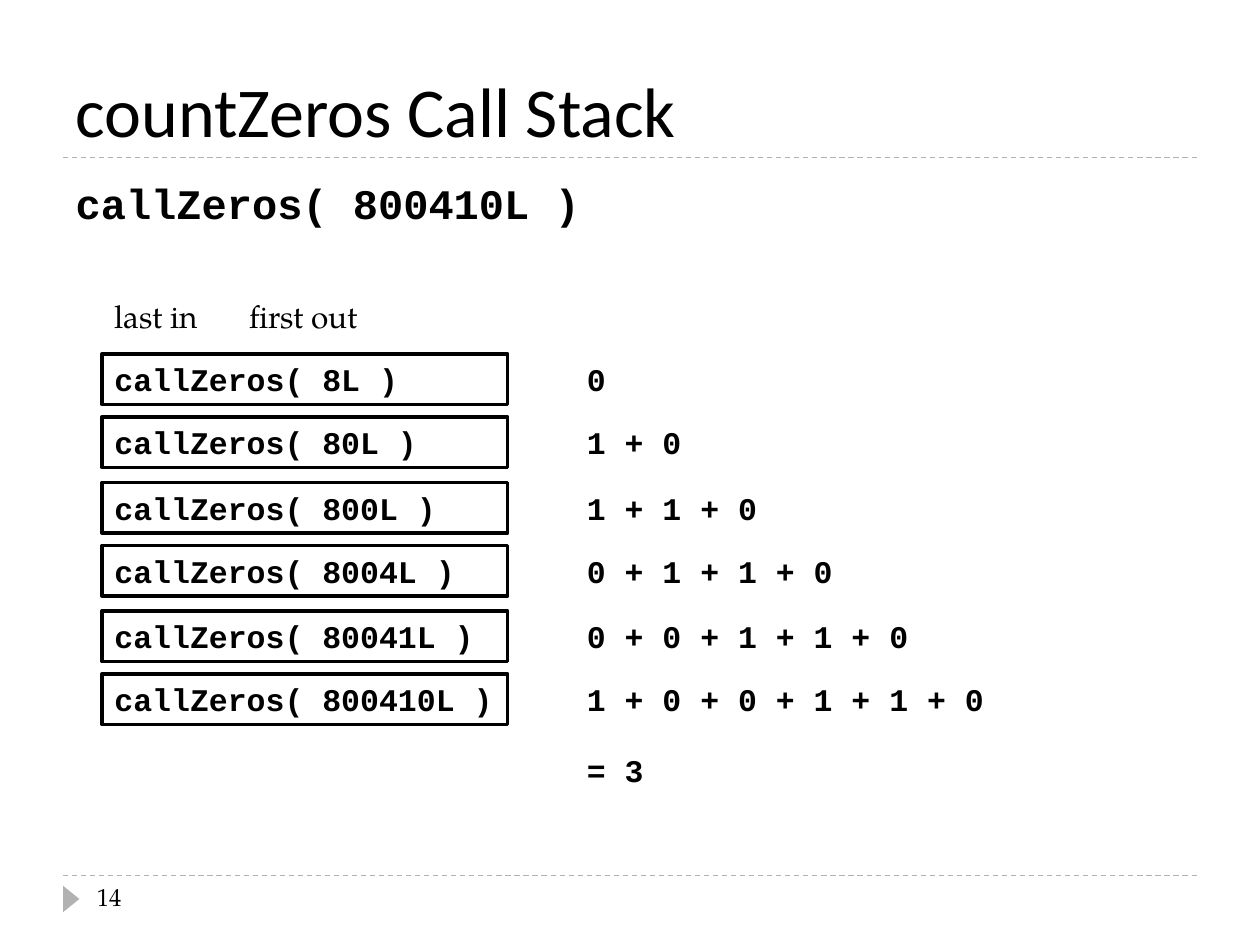
from lxml import etree
from pptx import Presentation
from pptx.dml.color import RGBColor
from pptx.enum.dml import MSO_LINE
from pptx.enum.shapes import MSO_CONNECTOR, MSO_SHAPE
from pptx.enum.text import MSO_ANCHOR, MSO_AUTO_SIZE, PP_ALIGN
from pptx.oxml.ns import qn
from pptx.util import Inches, Pt

COLORS = {name: RGBColor.from_string(value) for name, value in
          {"ink": "000000", "rule": "B2B2B2"}.items()}
HEADING, CODE, PROSE = "Calibri", "Courier New", "TeX Gyre Pagella"


def format_run(run, font, size, bold=False):
    run.font.name = font
    run.font.size = Pt(size)
    run.font.bold = bold
    run.font.color.rgb = COLORS["ink"]


def add_text(text, left, top, width, font, size, bold=False, framed=False):
    """Add one left-aligned line of text, with a black frame if framed."""
    place = [Inches(v) for v in (left, top, width, 0.4)]
    if framed:
        box = slide.shapes.add_shape(MSO_SHAPE.RECTANGLE, *place)
        box.shadow.inherit = False
        box.fill.background()
        box.line.color.rgb = COLORS["ink"]
        box.line.width = Pt(2)
    else:
        box = slide.shapes.add_textbox(*place)
    frame = box.text_frame
    frame.word_wrap = True
    frame.margin_right = 0
    frame.vertical_anchor = MSO_ANCHOR.TOP
    frame.text = text
    frame.paragraphs[0].alignment = PP_ALIGN.LEFT
    format_run(frame.paragraphs[0].runs[0], font, size, bold)


prs = Presentation()
prs.slide_width, prs.slide_height = Inches(10), Inches(7.5)
slide = prs.slides.add_slide(prs.slide_layouts[1])

# Rules and page marker
for y in (6.95, 1.25):
    rule = slide.shapes.add_connector(
        MSO_CONNECTOR.STRAIGHT, Inches(0.5), Inches(y), Inches(9.5), Inches(y))
    rule.line.color.rgb = COLORS["rule"]
    rule.line.width = Pt(0.75)
    rule.line.dash_style = MSO_LINE.DASH
    etree.SubElement(rule._element.spPr, qn("a:effectLst"))

marker = slide.shapes.add_shape(
    MSO_SHAPE.ISOSCELES_TRIANGLE, Inches(0.46), Inches(7.07), Inches(0.21), Inches(0.13))
marker.rotation = 90
marker.shadow.inherit = False
marker.fill.solid()
marker.fill.fore_color.rgb = COLORS["rule"]
marker.line.fill.background()
add_text("14", 0.67, 6.95, 2.17, PROSE, 14)

# Title and the first call
title, body = slide.shapes.title, slide.placeholders[1]
for holder, top, height, anchor in ((title, 0.17, 1.08, MSO_ANCHOR.BOTTOM),
                                    (body, 1.33, 5.4, MSO_ANCHOR.TOP)):
    holder.left, holder.top = Inches(0.5), Inches(top)
    holder.width, holder.height = Inches(9), Inches(height)
    holder.text_frame.auto_size = MSO_AUTO_SIZE.NONE
    holder.text_frame.vertical_anchor = anchor

title.text_frame.text = "countZeros Call Stack"
heading = title.text_frame.paragraphs[0]
heading.alignment = PP_ALIGN.LEFT
format_run(heading.runs[0], HEADING, 40)

body.text_frame.text = "callZeros( 800410L )"
first_call = body.text_frame.paragraphs[0]
first_call.space_before = Pt(6)
format_run(first_call.runs[0], CODE, 24, bold=True)
tail = first_call.add_run()
tail.text = " "
format_run(tail, PROSE, 26)
bullet_props = first_call._p.get_or_add_pPr()
bullet_props.set("marL", str(Inches(0.3)))
bullet_props.set("indent", str(Inches(-0.3)))
etree.SubElement(bullet_props, qn("a:buNone"))

# Call stack: the newest call on top, its return sum on the right
add_text("last in", 0.81, 2.31, 0.94, PROSE, 18)
add_text("first out", 1.88, 2.31, 1.1, PROSE, 18)

stack = [
    ("8L", "0"),
    ("80L", "1 + 0"),
    ("800L", "1 + 1 + 0"),
    ("8004L", "0 + 1 + 1 + 0"),
    ("80041L", "0 + 0 + 1 + 1 + 0"),
    ("800410L", "1 + 0 + 0 + 1 + 1 + 0"),
]
for i, (argument, total) in enumerate(stack):
    top = 2.81 + 1.02 * (i // 2) + 0.5 * (i % 2)
    add_text(f"callZeros( {argument} )", 0.81, top, 3.22, CODE, 18, bold=True, framed=True)
    add_text(total, 4.56, top, 3.4, CODE, 18, bold=True)
add_text("= 3", 4.56, 5.91, 3.4, CODE, 18, bold=True)

prs.save("out.pptx")
